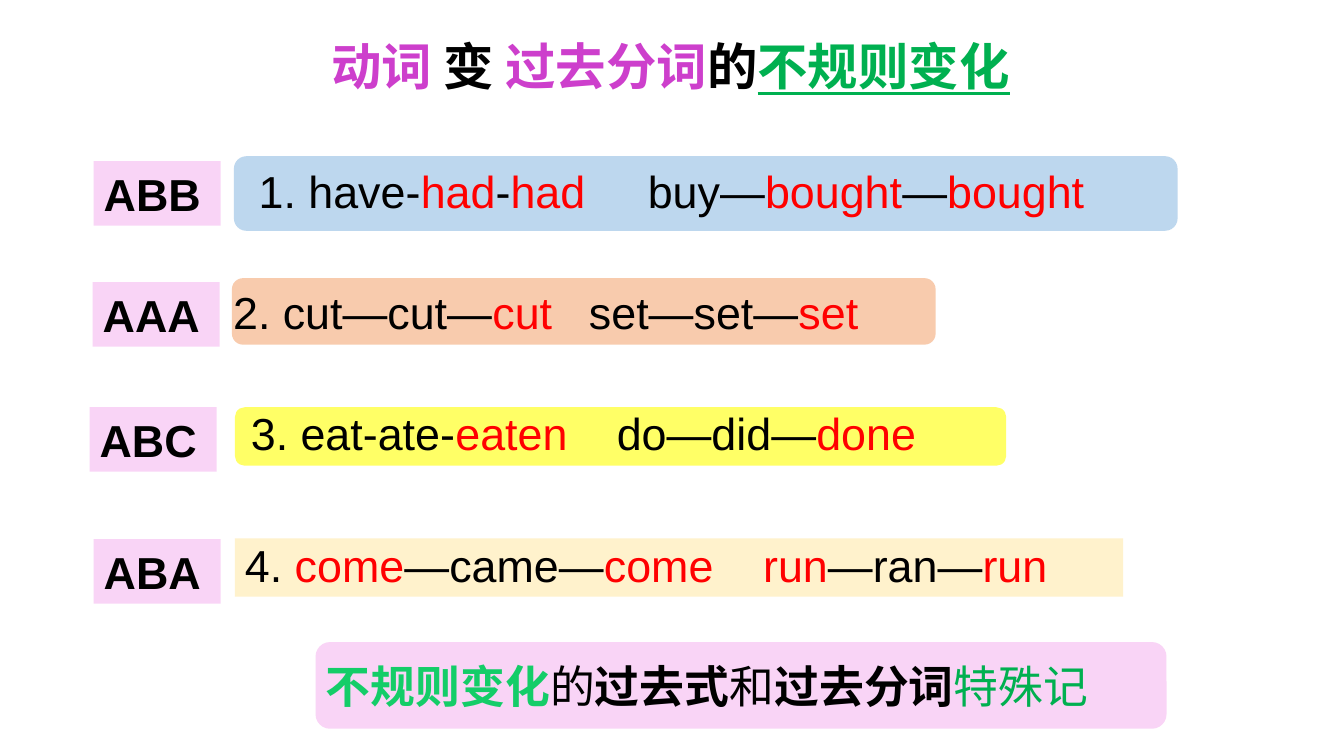
from lxml import etree
from pptx import Presentation
from pptx.dml.color import RGBColor
from pptx.enum import shapes, text
from pptx.oxml.ns import qn
from pptx.util import Inches, Pt

BLACK, RED, GREEN, ORCHID, PINK = "000000", "FF0000", "00B050", "CD3FCC", "F9D4F6"
ROUNDED = shapes.MSO_SHAPE.ROUNDED_RECTANGLE
RECTANGLE = shapes.MSO_SHAPE.RECTANGLE


def color(value):
    return RGBColor.from_string(value)


def add_tab_stop(paragraph, position):
    tabs = etree.SubElement(paragraph._p.get_or_add_pPr(), qn("a:tabLst"))
    etree.SubElement(tabs, qn("a:tab"), pos=str(Inches(position)), algn="l")


def write_runs(paragraph, runs, size):
    """Write (text, colour, bold) runs; a pair of colours makes a gradient."""
    paragraph.font.name = "Arial"
    paragraph.font.size = Pt(size)
    for words, shade, bold in runs:
        run = paragraph.add_run()
        run.text = words
        run.font.bold = bold
        if isinstance(shade, tuple):
            run.font.fill.gradient()
            run.font.fill.gradient_angle = 0
            for stop, value in zip(run.font.fill.gradient_stops, shade):
                stop.color.rgb = color(value)
        else:
            run.font.color.rgb = color(shade)


def add_band(slide, kind, box, fill, runs, inset=0.1, tab=None, spacing=1.0):
    """Add a filled shape with left-aligned text; tab is measured from the inset."""
    band = slide.shapes.add_shape(kind, *map(Inches, box))
    band.shadow.inherit = False
    band.fill.solid()
    band.fill.fore_color.rgb = color(fill)
    band.line.fill.background()
    frame = band.text_frame
    frame.word_wrap = True
    frame.vertical_anchor = text.MSO_ANCHOR.MIDDLE
    frame.margin_left = Inches(inset)
    paragraph = frame.paragraphs[0]
    paragraph.alignment = text.PP_ALIGN.LEFT
    paragraph.line_spacing = spacing
    if tab:
        add_tab_stop(paragraph, tab)
    write_runs(paragraph, runs, 32)


def add_title(slide):
    title = slide.shapes.add_textbox(Inches(2.9), Inches(0.36), Inches(7.5), Inches(0.58))
    frame = title.text_frame
    frame.word_wrap = True
    frame.vertical_anchor = text.MSO_ANCHOR.MIDDLE
    paragraph = frame.paragraphs[0]
    paragraph.alignment = text.PP_ALIGN.CENTER
    write_runs(paragraph, [("动词", ORCHID, True), (" 变 ", BLACK, True),
                           ("过去分词", ORCHID, True), ("的", BLACK, True),
                           ("不规则变化", GREEN, True)], 36)
    paragraph.runs[-1].font.underline = True


def main():
    presentation = Presentation()
    presentation.slide_width = Inches(13.33)
    presentation.slide_height = Inches(7.5)
    slide = presentation.slides.add_slide(presentation.slide_layouts[6])

    add_title(slide)

    # Pattern, label corner, band kind, band box, fill, inset, tab, line spacing, verb forms
    patterns = [
        ("ABB", (0.93, 1.6), ROUNDED, (2.32, 1.55, 9.36, 0.74), "BDD7EE", 0.21, 3.86, 0.9,
         [("1. have-", BLACK), ("had", RED), ("-", BLACK), ("had", RED), ("\tbuy—", BLACK),
          ("bought", RED), ("—", BLACK), ("bought", RED)]),
        ("AAA", (0.92, 2.8), ROUNDED, (2.3, 2.76, 6.98, 0.66), "F8CBAD", -0.02, 3.53, 1.0,
         [("2. cut—cut—", BLACK), ("cut", RED), ("\tset—set—", BLACK), ("set", RED)]),
        ("ABC", (0.89, 4.04), ROUNDED, (2.33, 4.04, 7.65, 0.58), "FFFF66", 0.13, 3.63, 0.9,
         [("3. eat-ate-", BLACK), ("eaten", RED), ("\tdo—did—", BLACK), ("done", RED)]),
        ("ABA", (0.93, 5.35), RECTANGLE, (2.33, 5.34, 8.81, 0.58), "FFF2CC", 0.1, 5.14, 0.9,
         [("4. ", BLACK), ("come", RED), ("—came—", BLACK), ("come\trun", RED),
          ("—ran—", BLACK), ("run", RED)]),
    ]
    for pattern, corner, kind, box, fill, inset, tab, spacing, forms in patterns:
        runs = [(words, shade, False) for words, shade in forms]
        add_band(slide, kind, box, fill, runs, inset, tab, spacing)
        add_band(slide, RECTANGLE, (*corner, 1.26, 0.64), PINK, [(pattern, BLACK, True)])

    add_band(slide, ROUNDED, (3.13, 6.37, 8.44, 0.86), PINK,
             [("不规则变化", ("14CD68", "035C7D"), True), ("的", BLACK, False),
              ("过去式", BLACK, True), ("和", BLACK, False),
              ("过去分词", BLACK, True), ("特殊记", GREEN, False)], inset=0.06)

    presentation.save("out.pptx")


if __name__ == "__main__":
    main()
